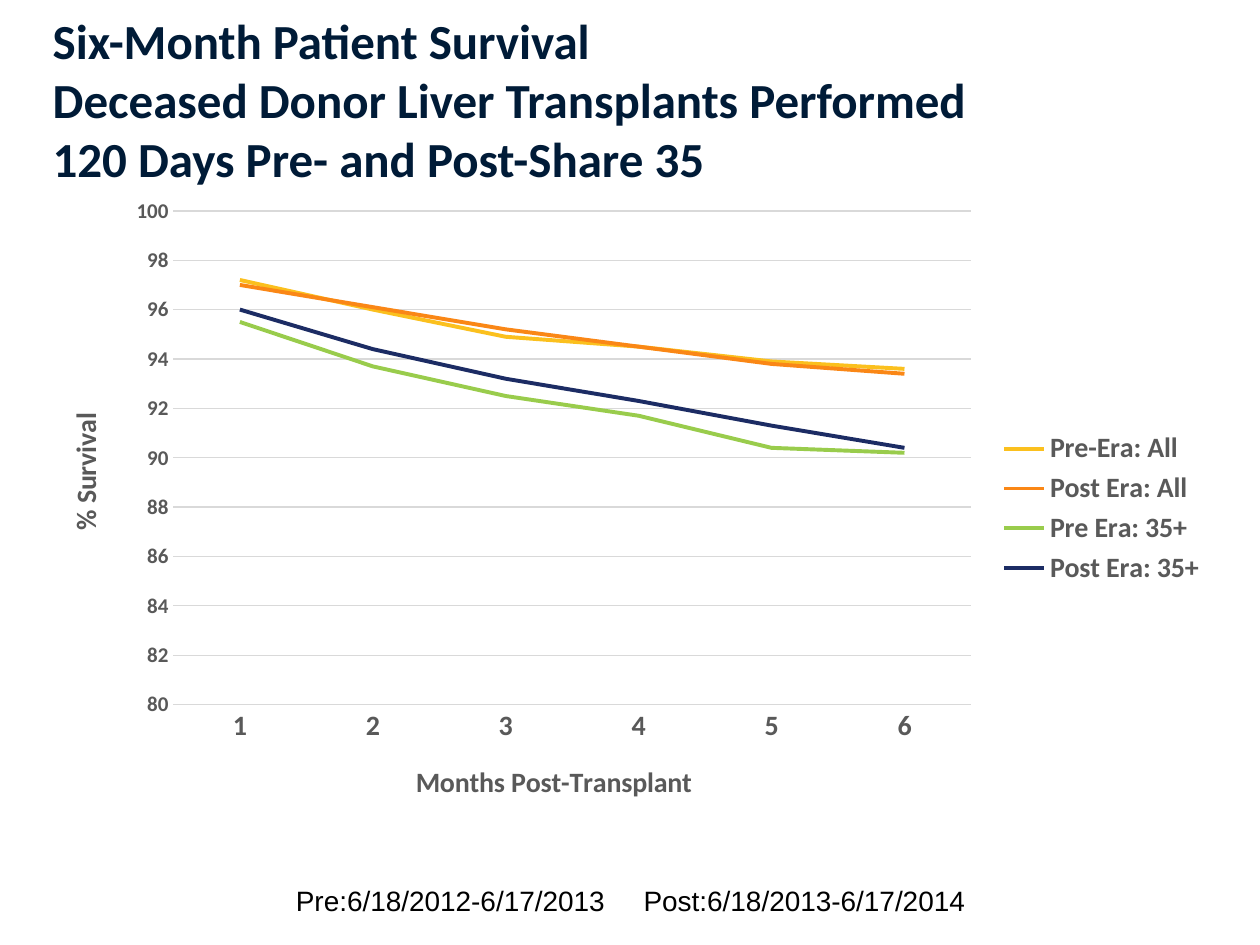
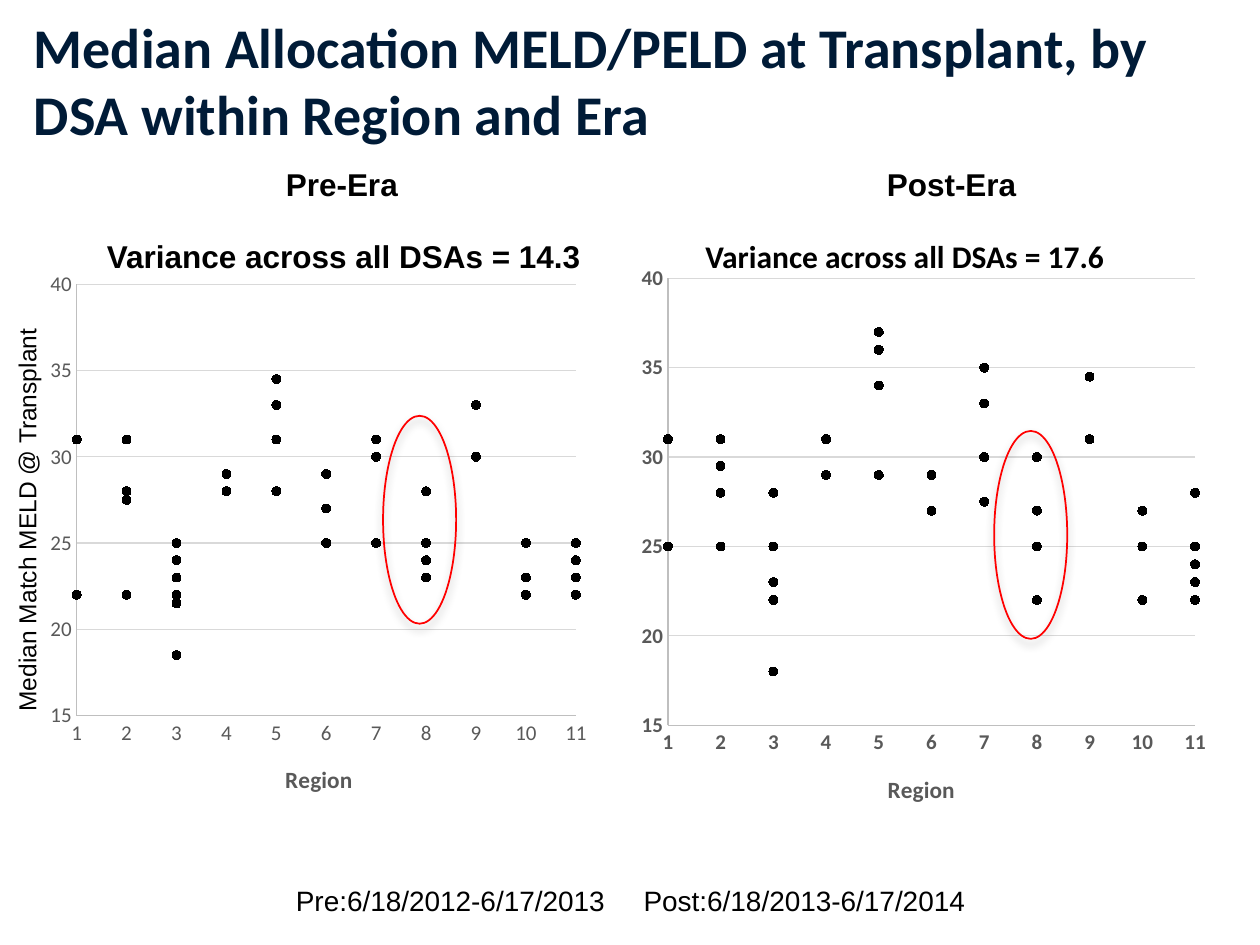
from itertools import zip_longest

from lxml.etree import SubElement
from pptx import Presentation
from pptx.chart.data import CategoryChartData, XyChartData
from pptx.dml.color import RGBColor
from pptx.enum.chart import (XL_CHART_TYPE, XL_LEGEND_POSITION,
                             XL_MARKER_STYLE, XL_TICK_MARK)
from pptx.enum.shapes import MSO_SHAPE
from pptx.enum.text import MSO_ANCHOR
from pptx.oxml.ns import qn
from pptx.util import Inches, Pt

NAVY = RGBColor(0x00, 0x1B, 0x37)
BLACK = RGBColor(0x00, 0x00, 0x00)
RED = RGBColor(0xFF, 0x00, 0x00)
GRAY = RGBColor(0x59, 0x59, 0x59)
RULE = RGBColor(0xBF, 0xBF, 0xBF)
GRID = RGBColor(0xD9, 0xD9, 0xD9)
GOLD = RGBColor(0xFB, 0xC0, 0x1E)
AMBER = RGBColor(0xFA, 0x87, 0x16)
GREEN = RGBColor(0x99, 0xCC, 0x4C)
BLUE = RGBColor(0x1C, 0x2C, 0x64)

COLS, ROWS = 100, 75

CURVES = [
    ("Pre-Era: All", GOLD, (97.2, 96, 94.9, 94.5, 93.9, 93.6)),
    ("Post Era: All", AMBER, (97, 96.1, 95.2, 94.5, 93.8, 93.4)),
    ("Pre Era: 35+", GREEN, (95.5, 93.7, 92.5, 91.7, 90.4, 90.2)),
    ("Post Era: 35+", BLUE, (96, 94.4, 93.2, 92.3, 91.3, 90.4)),
]

PRE = [
    (22, 31),
    (22, 28, 27.5, 31, 31),
    (24, 22, 24, 23, 25, 22, 24, 23, 21.5, 18.5),
    (29, 28, 29, 28),
    (28, 33, 34.5, 31, 33),
    (25, 29, 27),
    (30, 31, 25, 25),
    (28, 23, 25, 25, 24),
    (33, 30),
    (22, 23, 25, 22, 25),
    (24, 22, 25, 22, 25, 22, 23),
]

POST = [
    (25, 31),
    (25, 31, 28, 31, 29.5),
    (25, 23, 25, 25, 28, 25, 25, 23, 22, 18),
    (31, 31, 29, 29),
    (29, 34, 37, 36, 34),
    (27, 27, 29),
    (30, 33, 35, 27.5),
    (30, 22, 27, 25, 22),
    (34.5, 31),
    (22, 25, 27, 25, 25),
    (24, 22, 28, 24, 25, 23, 24),
]


def lay_out(node, shares, inner=False):
    old = node.find(qn("c:layout"))
    if old is None:
        old = SubElement(node, qn("c:layout"))
        node.insert(0, old)
    box = SubElement(old, qn("c:manualLayout"))
    if inner:
        SubElement(box, qn("c:layoutTarget"), val="inner")
    for key in "xy":
        SubElement(box, qn(f"c:{key}Mode"), val="edge")
    for key, share in zip("xywh", shares):
        SubElement(box, qn(f"c:{key}"), val=str(share / 100))


def drop_gaps(chart):
    for point in list(chart.element.iter(qn("c:pt"))):
        if point.find(qn("c:v")).text == "None":
            point.getparent().remove(point)


def set_font(font, size, color, bold=False, face="Calibri"):
    font.name, font.size, font.bold = face, Pt(size), bold
    font.color.rgb = color


class Deck:
    def __init__(self):
        self.show = Presentation()
        self.show.slide_width = Inches(10)
        self.show.slide_height = Inches(7.5)
        self.slide = None

    def box(self, left, top, width, height):
        col = self.show.slide_width / COLS
        row = self.show.slide_height / ROWS
        return (round(left * col), round(top * row),
                round(width * col), round(height * row))

    def page(self, title, area, size):
        self.slide = self.show.slides.add_slide(self.show.slide_layouts[6])
        self.text(title, area, size, NAVY, True, "Calibri", wrap=True,
                  anchor=MSO_ANCHOR.MIDDLE)
        self.text("Pre:6/18/2012-6/17/2013\tPost:6/18/2013-6/17/2014",
                  (22.5, 69.6, 55.8, 3.7), 16, wrap=True, tab=2.76)

    def text(self, words, area, size, color=BLACK, bold=False, face="Arial",
             wrap=False, anchor=MSO_ANCHOR.TOP, turn=0, tab=None):
        shape = self.slide.shapes.add_textbox(*self.box(*area))
        shape.rotation = turn
        frame = shape.text_frame
        frame.word_wrap = wrap
        frame.vertical_anchor = anchor
        para = frame.paragraphs[0]
        para.text = words
        if tab:
            stops = SubElement(para._p.get_or_add_pPr(), qn("a:tabLst"))
            SubElement(stops, qn("a:tab"), pos=str(Inches(tab)), algn="l")
        set_font(para.font, size, color, bold, face)

    def chart(self, kind, data, area, plot):
        frame = self.slide.shapes.add_chart(kind, *self.box(*area), data)
        chart = frame.chart
        chart.has_title = chart.has_legend = False
        set_font(chart.font, 10, BLACK)
        chart.plots[0].vary_by_categories = False
        lay_out(chart.element.find(".//" + qn("c:plotArea")), plot, True)
        return chart

    def axis(self, axis, size, bold, line, span=None, step=None, grid=False):
        axis.major_tick_mark = axis.minor_tick_mark = XL_TICK_MARK.NONE
        axis.has_major_gridlines = grid
        if grid:
            rule = axis.major_gridlines.format.line
            rule.color.rgb, rule.width = GRID, Pt(0.75)
        if span:
            axis.minimum_scale, axis.maximum_scale = span
        if step:
            axis.major_unit = step
        set_font(axis.tick_labels.font, size, GRAY, bold)
        if line is None:
            axis.format.line.fill.background()
        else:
            axis.format.line.color.rgb = line
            axis.format.line.width = Pt(0.75)

    def label(self, axis, words, size, spot, turn=0):
        title = axis.axis_title
        para = title.text_frame.paragraphs[0]
        para.text = words
        set_font(para.font, size, GRAY, True)
        title.element.find(".//" + qn("a:bodyPr")).set("rot", str(turn * 60000))
        lay_out(title.element, spot)

    def curves(self, area):
        data = CategoryChartData()
        data.categories = [str(month) for month in range(1, 7)]
        for name, _, rates in CURVES:
            data.add_series(name, rates)
        chart = self.chart(XL_CHART_TYPE.LINE, data, area,
                           (11.3, 3.8, 67.7, 76.7))
        for line, (_, color, _) in zip(chart.plots[0].series, CURVES):
            line.smooth = False
            line.marker.style = XL_MARKER_STYLE.NONE
            line.format.line.color.rgb = color
            line.format.line.width = Pt(2.25)
        self.axis(chart.category_axis, 16, True, GRID)
        self.axis(chart.value_axis, 12, True, None, (80, 100), 2, True)
        self.label(chart.category_axis, "Months Post-Transplant", 16,
                   (31.45, 88.8))
        self.label(chart.value_axis, "% Survival", 16, (1.8, 34.4), -90)
        chart.has_legend = True
        chart.legend.position = XL_LEGEND_POSITION.RIGHT
        chart.legend.include_in_layout = False
        set_font(chart.legend.font, 16, GRAY, True)

    def dots(self, groups, area, plot, spot, bold):
        data = XyChartData()
        for rank, scores in enumerate(zip_longest(*groups), 1):
            row = data.add_series(f"Series {rank}")
            for region, score in enumerate(scores, 1):
                row.add_data_point(region, score)
        chart = self.chart(XL_CHART_TYPE.XY_SCATTER, data, area, plot)
        drop_gaps(chart)
        for row in chart.plots[0].series:
            row.format.line.fill.background()
            mark = row.marker
            mark.style, mark.size = XL_MARKER_STYLE.CIRCLE, 5
            mark.format.fill.solid()
            mark.format.fill.fore_color.rgb = BLACK
            mark.format.line.color.rgb = BLACK
        self.axis(chart.category_axis, 12, bold, RULE, (1, 11), 1)
        self.axis(chart.value_axis, 12, bold, RULE, (15, 40), 5, True)
        self.label(chart.category_axis, "Region", 13.3, spot)

    def ring(self, left, top):
        area = self.box(left, top, 5.8, 16.5)
        ring = self.slide.shapes.add_shape(MSO_SHAPE.OVAL, *area)
        ring.fill.background()
        ring.line.color.rgb, ring.line.width = RED, Pt(1)
        ring.shadow.inherit = False
        glow = SubElement(ring.element.spPr.find(qn("a:effectLst")),
                          qn("a:outerShdw"), blurRad=str(Pt(5)),
                          dist=str(Pt(3)), dir="5400000", rotWithShape="0")
        tint = SubElement(glow, qn("a:srgbClr"), val=str(BLACK))
        SubElement(tint, qn("a:alpha"), val="30000")


def main():
    deck = Deck()
    deck.page("Six-Month Patient Survival\n"
              "Deceased Donor Liver Transplants Performed\n"
              "120 Days Pre- and Post-Share 35", (3.2, 3.2, 95.6, 9.3), 28)
    deck.curves((3.2, 14.8, 93.5, 51.1))

    deck.page("Median Allocation MELD/PELD at Transplant, by DSA within "
              "Region and Era", (1.7, 1.7, 97.1, 9.3), 32)
    deck.dots(PRE, (3.1, 20.7, 44.3, 44.4), (6.75, 4.2, 89.45, 77.1),
              (43.35, 89), False)
    deck.dots(POST, (50, 20.2, 46.7, 45.7), (6.45, 4.15, 89.6, 77.6),
              (43.05, 89.4), True)
    deck.text("Pre-Era", (21.7, 12.6, 11.7, 4), 18, bold=True)
    deck.text("Post-Era", (69.4, 12.6, 12.4, 4), 18, bold=True)
    for left, score, face in ((7.5, 14.3, "Arial"), (55, 17.6, "Calibri")):
        deck.text(f"Variance across all DSAs = {score}",
                  (left, 18.3, 40, 4), 18, bold=True, face=face)
    deck.text("Median Match MELD @ Transplant", (-14.1, 39.5, 32.5, 3.4), 14,
              turn=270)
    deck.ring(30.4, 33)
    deck.ring(78.9, 34.2)
    deck.show.save("out.pptx")


if __name__ == "__main__":
    main()
